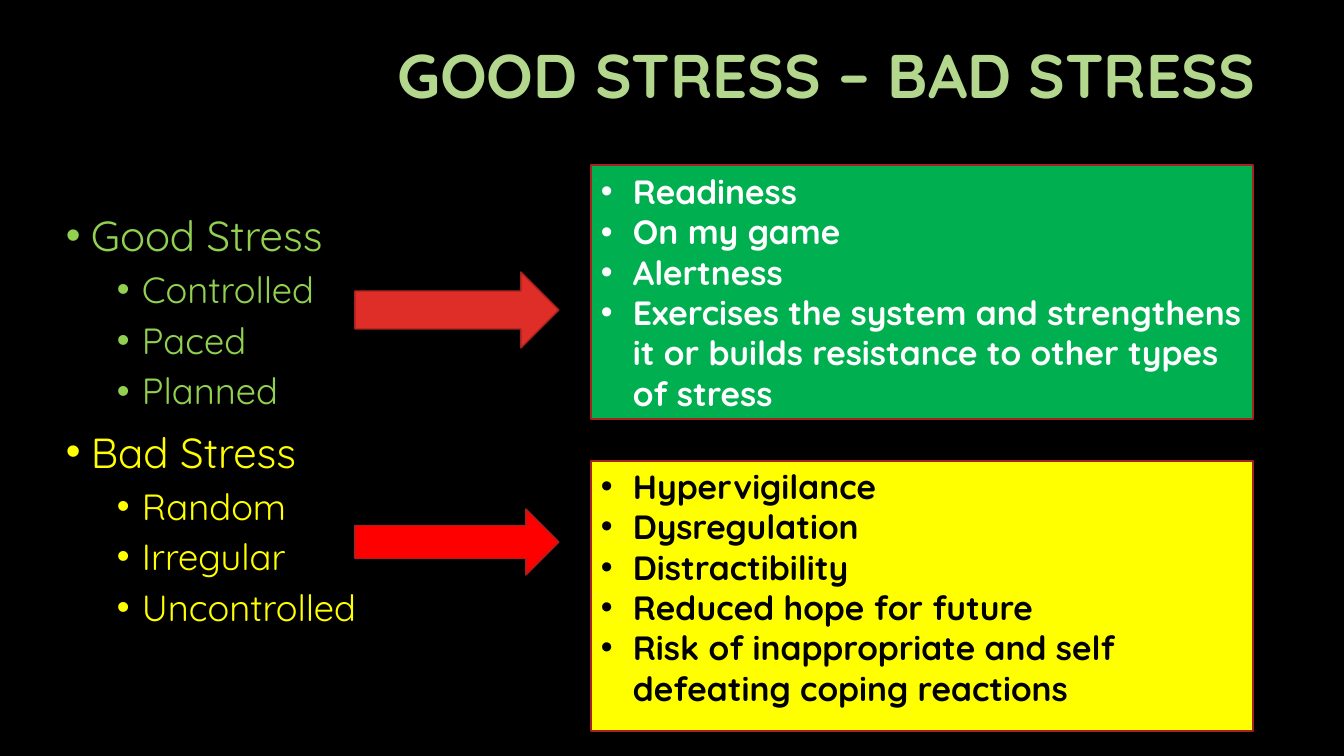
from pptx import Presentation
from pptx.dml.color import RGBColor
from pptx.enum.shapes import MSO_SHAPE as SHAPE
from pptx.enum.text import MSO_ANCHOR as ANCHOR, PP_ALIGN as ALIGN
from pptx.oxml.ns import qn
from pptx.util import Emu, Pt
from lxml.etree import SubElement

FONT = "Quicksand"
BLACK = RGBColor(0x00, 0x00, 0x00)
WHITE = RGBColor(0xFF, 0xFF, 0xFF)
SAGE = RGBColor(0xB3, 0xD7, 0x8D)
LIME = RGBColor(0x92, 0xD0, 0x50)
GREEN = RGBColor(0x00, 0xB0, 0x50)
YELLOW = RGBColor(0xFF, 0xFF, 0x00)
BRICK = RGBColor(0xDF, 0x2E, 0x28)
RED = RGBColor(0xFF, 0x00, 0x00)
DARK_RED = RGBColor(0xA5, 0x22, 0x1E)

STRESS_TYPES = [
    ("Good Stress", ["Controlled", "Paced", "Planned"], LIME),
    ("Bad Stress", ["Random", "Irregular", "Uncontrolled"], YELLOW),
]
GOOD_EFFECTS = [
    "Readiness",
    "On my game",
    "Alertness",
    "Exercises the system and strengthens it or builds resistance to other types of stress",
]
BAD_EFFECTS = [
    "Hypervigilance",
    "Dysregulation",
    "Distractibility",
    "Reduced hope for future",
    "Risk of inappropriate and self defeating coping reactions",
]


def px(n):
    return Emu(round(n * 12192000 / 1344))


def add_text(tf, text, size, color, bold=False, align=ALIGN.LEFT,
             indent=0, hang=0, before=0, level=0, spacing=1.0):
    first = not tf.paragraphs[0].runs
    p = tf.paragraphs[0] if first else tf.add_paragraph()
    p.level = level
    p.alignment = align
    p.line_spacing = spacing
    p.space_before = Pt(0 if first else before)
    if hang:
        pPr = p._p.get_or_add_pPr()
        pPr.set("marL", str(px(indent)))
        pPr.set("indent", str(-px(hang)))
        SubElement(pPr, qn("a:buFont"), typeface="Arial")
        SubElement(pPr, qn("a:buChar"), char="•")
    r = p.add_run()
    r.text = text
    r.font.name = FONT
    r.font.size = Pt(size)
    r.font.bold = bold
    r.font.color.rgb = color


def add_shape(slide, kind, box, fill):
    sp = slide.shapes.add_shape(kind, *map(px, box))
    sp.shadow.inherit = False
    sp.fill.solid()
    sp.fill.fore_color.rgb = fill
    sp.line.color.rgb = DARK_RED
    sp.line.width = Pt(1)
    return sp


def add_title(slide, box):
    sp = slide.shapes.title
    sp.left, sp.top, sp.width, sp.height = map(px, box)
    tf = sp.text_frame
    tf.word_wrap = True
    tf.vertical_anchor = ANCHOR.MIDDLE
    tf.margin_right = px(28)
    add_text(tf, "GOOD STRESS – BAD STRESS", 44, SAGE, bold=True,
             align=ALIGN.RIGHT, spacing=0.9)


def add_stress_types(slide, box):
    tf = slide.shapes.add_textbox(*map(px, box)).text_frame
    tf.word_wrap = True
    for heading, traits, color in STRESS_TYPES:
        add_text(tf, heading, 30, color, indent=25, hang=25, before=10)
        for trait in traits:
            add_text(tf, trait, 26, color, indent=76, hang=25, before=5, level=1)


def add_effects(slide, box, effects, fill, color, anchor):
    tf = add_shape(slide, SHAPE.RECTANGLE, box, fill).text_frame
    tf.word_wrap = True
    tf.vertical_anchor = anchor
    tf.margin_right = px(6)
    for effect in effects:
        add_text(tf, effect, 24, color, bold=True, indent=32, hang=32)


def main():
    prs = Presentation()
    prs.slide_width, prs.slide_height = px(1344), px(756)
    slide = prs.slides.add_slide(prs.slide_layouts[5])
    slide.background.fill.solid()
    slide.background.fill.fore_color.rgb = BLACK

    add_title(slide, (126, 4, 1158, 149))
    add_stress_types(slide, (56, 205, 328, 499))
    add_effects(slide, (591, 165, 662, 254), GOOD_EFFECTS, GREEN, WHITE, ANCHOR.MIDDLE)
    add_effects(slide, (591, 461, 662, 270), BAD_EFFECTS, YELLOW, BLACK, ANCHOR.TOP)
    add_shape(slide, SHAPE.RIGHT_ARROW, (355, 272, 204, 76), BRICK)
    add_shape(slide, SHAPE.RIGHT_ARROW, (355, 509, 204, 66), RED)

    prs.save("out.pptx")


if __name__ == "__main__":
    main()
